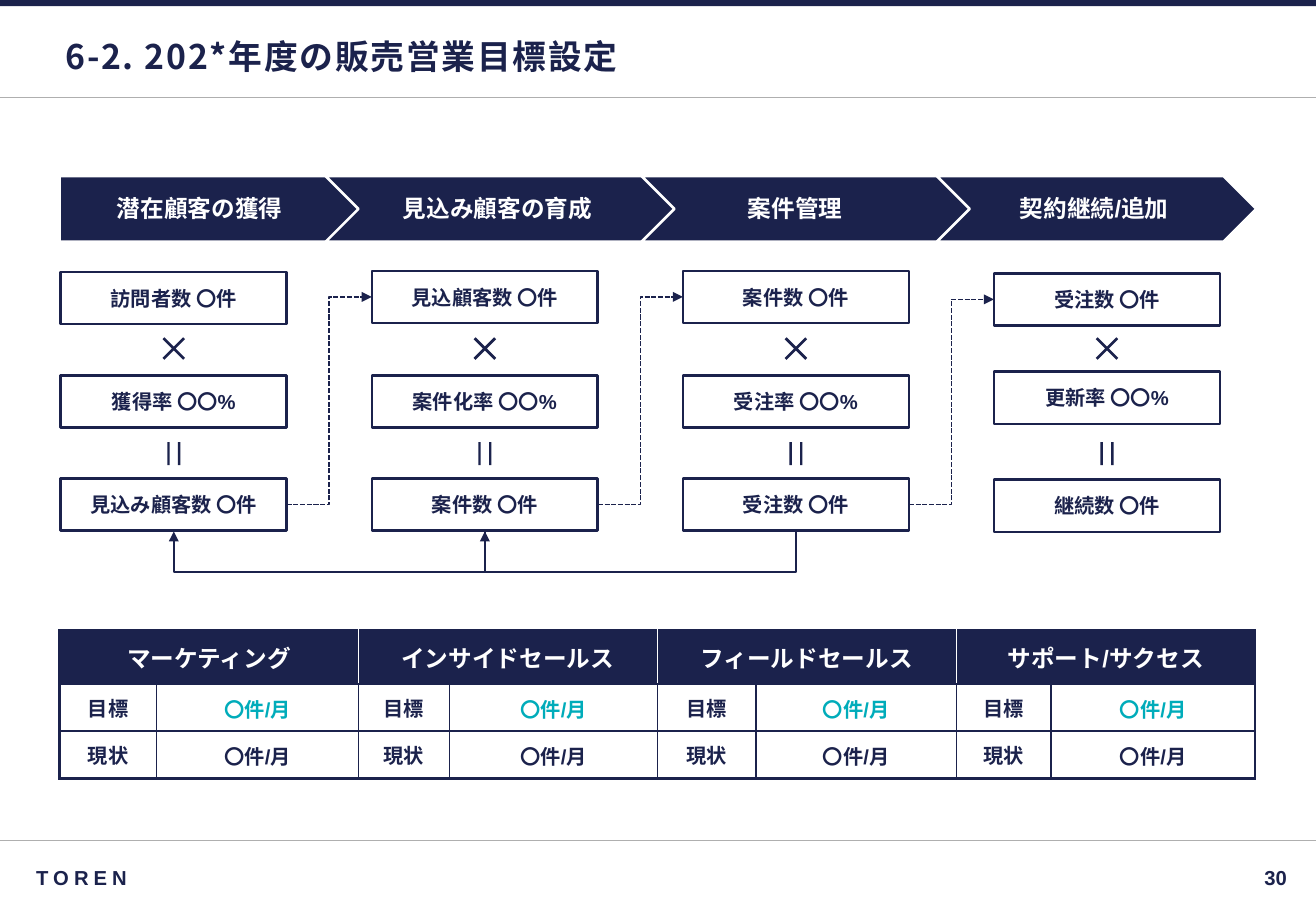
from pptx import Presentation
from pptx.dml.color import RGBColor
from pptx.enum.dml import MSO_LINE
from pptx.enum.shapes import MSO_CONNECTOR as Link, MSO_SHAPE as Shape
from pptx.enum.text import MSO_ANCHOR as Anchor, PP_ALIGN as Align
from pptx.oxml.ns import qn
from pptx.util import Inches, Pt
from lxml.etree import SubElement

# Content
NAVY, WHITE, TEAL, GRAY = "1B224C", "FFFFFF", "00ACBA", "AFAFAF"
LATIN, JAPANESE = "Arial", "Noto Sans CJK JP"
SLIDE_WIDTH, SLIDE_HEIGHT = 10.83, 7.5
TITLE = "6-2. 202*年度の販売営業目標設定"
COMPANY, PAGE = "TOREN", "30"

# Stage name, left, width, label left
STAGES = [
    ("潜在顧客の獲得", 0.49, 2.66, 0.66),
    ("見込み顧客の育成", 2.68, 3.07, 3.11),
    ("案件管理", 5.28, 2.9, 5.56),
    ("契約継続/追加", 7.71, 2.63, 8.02),
]
# Factor × rate = result, with the top of each box
FORMULAS = [
    [("訪問者数 〇件", 2.24), ("獲得率 〇〇%", 3.09), ("見込み顧客数 〇件", 3.94)],
    [("見込顧客数 〇件", 2.23), ("案件化率 〇〇%", 3.09), ("案件数 〇件", 3.94)],
    [("案件数 〇件", 2.23), ("受注率 〇〇%", 3.09), ("受注数 〇件", 3.94)],
    [("受注数 〇件", 2.25), ("更新率 〇〇%", 3.06), ("継続数 〇件", 3.95)],
]
TEAMS = ["マーケティング", "インサイドセールス", "フィールドセールス", "サポート/サクセス"]
TARGETS = [("目標", "〇件/月", TEAL), ("現状", "〇件/月", NAVY)]
COLUMN_WIDTHS = [0.8, 1.66, 0.75, 1.71, 0.81, 1.65, 0.78, 1.68]
ROW_HEIGHTS = [0.44, 0.39, 0.39]

BOX_LEFT, BOX_STEP, BOX_WIDTH, BOX_HEIGHT = 0.5, 2.56, 1.86, 0.43
TIMES_SIZE, EQUAL_WIDTH, EQUAL_HEIGHT = 0.24, 0.26, 0.23
RETURN_DROP, RETURN_SPAN = 0.35, 0.01

presentation = Presentation()
presentation.slide_width = Inches(SLIDE_WIDTH)
presentation.slide_height = Inches(SLIDE_HEIGHT)
slide = presentation.slides.add_slide(presentation.slide_layouts[6])


def rgb(color):
    return RGBColor.from_string(color)


def write(frame, text, size, color, align=Align.CENTER, font=LATIN, spacing=0):
    frame.text = text
    paragraph = frame.paragraphs[0]
    paragraph.alignment = align
    run = paragraph.runs[0]
    run.font.size, run.font.bold, run.font.name = Pt(size), True, font
    run.font.color.rgb = rgb(color)
    properties = run.font._element
    SubElement(properties, qn("a:ea")).set("typeface", JAPANESE)
    if spacing:
        properties.set("spc", str(spacing * 100))


def set_margins(target, horizontal, vertical):
    target.margin_left = target.margin_right = Inches(horizontal)
    target.margin_top = target.margin_bottom = Inches(vertical)


def add_text(box, text, size, color, margins=(0.04, 0.04), **style):
    frame = slide.shapes.add_textbox(*map(Inches, box)).text_frame
    frame.word_wrap = True
    frame.vertical_anchor = Anchor.MIDDLE
    set_margins(frame, *margins)
    write(frame, text, size, color, **style)
    return frame


def add_shape(kind, box, fill, line=None, adjustments=(), rotation=0):
    shape = slide.shapes.add_shape(kind, *map(Inches, box))
    shape.shadow.inherit = False
    shape.fill.solid()
    shape.fill.fore_color.rgb = rgb(fill)
    if line:
        shape.line.color.rgb = rgb(line)
        shape.line.width = Pt(1.5)
    else:
        shape.line.fill.background()
    for index, value in enumerate(adjustments):
        shape.adjustments[index] = value
    shape.rotation = rotation
    return shape


def add_line(kind, start, end, color, width, arrow=False):
    line = slide.shapes.add_connector(kind, *map(Inches, start + end))
    line.line.color.rgb = rgb(color)
    line.line.width = Pt(width)
    if arrow:
        SubElement(line.line._get_or_add_ln(), qn("a:tailEnd")).set("type", "triangle")
    SubElement(line._element.spPr, qn("a:effectLst"))
    return line


def set_borders(cell, edges):
    properties = cell._tc.get_or_add_tcPr()
    for index, (side, color, width) in enumerate(edges):
        border = SubElement(properties, qn("a:ln" + side))
        border.set("w", str(Pt(width)))
        fill = SubElement(border, qn("a:solidFill"))
        SubElement(fill, qn("a:srgbClr")).set("val", color)
        properties.insert(index, border)


# Frame, title and footer
for y in (6.92, 0.8):
    add_line(Link.STRAIGHT, (0, y), (SLIDE_WIDTH, y), GRAY, 0.75)
add_shape(Shape.RECTANGLE, (0, 0, SLIDE_WIDTH, 0.05), NAVY)
add_text((0.5, 0.21, 9.84, 0.51), TITLE, 20, NAVY, align=Align.LEFT, font=JAPANESE, spacing=1)
add_text((0.2, 7.07, 8.66, 0.31), COMPANY, 12, NAVY, (0.1, 0.05), align=Align.LEFT, spacing=3)
add_text((9.06, 7.07, 1.57, 0.31), PAGE, 12, NAVY, align=Align.RIGHT)

# Target table
table = slide.shapes.add_table(
    len(ROW_HEIGHTS), len(COLUMN_WIDTHS), Inches(0.49), Inches(5.19),
    Inches(sum(COLUMN_WIDTHS)), Inches(sum(ROW_HEIGHTS))).table
table.first_row = table.horz_banding = False
for column, width in zip(table.columns, COLUMN_WIDTHS):
    column.width = Inches(width)
for row, height in zip(table.rows, ROW_HEIGHTS):
    row.height = Inches(height)
for index, team in enumerate(TEAMS):
    header = table.cell(0, 2 * index)
    header.merge(table.cell(0, 2 * index + 1))
    write(header.text_frame, team, 14, WHITE)
    for row, (label, value, color) in enumerate(TARGETS, 1):
        write(table.cell(row, 2 * index).text_frame, label, 12, NAVY)
        write(table.cell(row, 2 * index + 1).text_frame, value, 12, color)

last_row, last_column = len(ROW_HEIGHTS) - 1, len(COLUMN_WIDTHS) - 1
for row in range(last_row + 1):
    for column in range(last_column + 1):
        cell = table.cell(row, column)
        cell.vertical_anchor = Anchor.MIDDLE
        is_value = row > 0 and column % 2 == 1
        set_margins(cell, *((0.12, 0.08) if is_value else (0.1, 0.05)))
        if row == 0:
            cell.fill.solid()
            cell.fill.fore_color.rgb = rgb(NAVY)
        else:
            cell.fill.background()
        inner = WHITE if row == 0 else NAVY
        set_borders(cell, [
            ("L", *((NAVY, 1.5) if column == 0 else (inner, 1))),
            ("R", *((NAVY, 1.5) if column >= last_column - (row == 0) else (inner, 1))),
            ("T", NAVY, 1.5 if row == 0 else 1),
            ("B", NAVY, 1.5 if row == last_row else 1),
        ])

# Stage arrows
for index, (name, left, width, label_left) in enumerate(STAGES):
    kind = Shape.CHEVRON if index else Shape.PENTAGON
    add_shape(kind, (left, 1.45, width, 0.54), NAVY, WHITE, [0.5])
    label = add_text((label_left, 1.55, 2.01, 0.35), name, 14, WHITE, (0.04, 0))
    label.margin_right = Inches(0.08)
    label.paragraphs[0].line_spacing = 0.9

# Formula columns
lefts = [BOX_LEFT + BOX_STEP * index for index in range(len(FORMULAS))]
for left, formula in zip(lefts, FORMULAS):
    center = left + BOX_WIDTH / 2
    for text, top in formula:
        box = add_shape(Shape.RECTANGLE, (left, top, BOX_WIDTH, BOX_HEIGHT), WHITE, NAVY)
        set_margins(box.text_frame, 0.08, 0.08)
        box.text_frame.vertical_anchor = Anchor.MIDDLE
        write(box.text_frame, text, 12, NAVY)
    add_shape(Shape.CROSS, (center - TIMES_SIZE / 2, 2.75, TIMES_SIZE, TIMES_SIZE),
              NAVY, adjustments=[0.453], rotation=45)
    add_shape(Shape.MATH_EQUAL, (center - EQUAL_WIDTH / 2, 3.62, EQUAL_WIDTH, EQUAL_HEIGHT),
              NAVY, adjustments=[0.084, 0.299], rotation=90)

for index in range(len(FORMULAS) - 1):
    # Result feeds the first box of the next column
    start = (lefts[index] + BOX_WIDTH, FORMULAS[index][-1][1] + BOX_HEIGHT / 2)
    end = (lefts[index + 1], FORMULAS[index + 1][0][1] + BOX_HEIGHT / 2)
    feed = add_line(Link.ELBOW, start, end, NAVY, 1, arrow=True)
    feed.line.dash_style = MSO_LINE.SQUARE_DOT

for left in lefts[:2]:
    # Return path under the boxes: an elbow turned a quarter so that it drops first
    x = left + BOX_WIDTH / 2 + BOX_STEP / 2
    y = FORMULAS[0][-1][1] + BOX_HEIGHT
    start = (x - RETURN_SPAN / 2, y - BOX_STEP / 2)
    end = (x + RETURN_SPAN / 2, y + BOX_STEP / 2)
    back = add_line(Link.ELBOW, start, end, NAVY, 1.5, arrow=True)
    properties = back._element.spPr
    properties.find(qn("a:xfrm")).set("rot", str(90 * 60000))
    guide = SubElement(properties.find(qn("a:prstGeom")).find(qn("a:avLst")), qn("a:gd"))
    guide.set("name", "adj1")
    guide.set("fmla", f"val {round(RETURN_DROP / RETURN_SPAN * 100000)}")

presentation.save("out.pptx")
